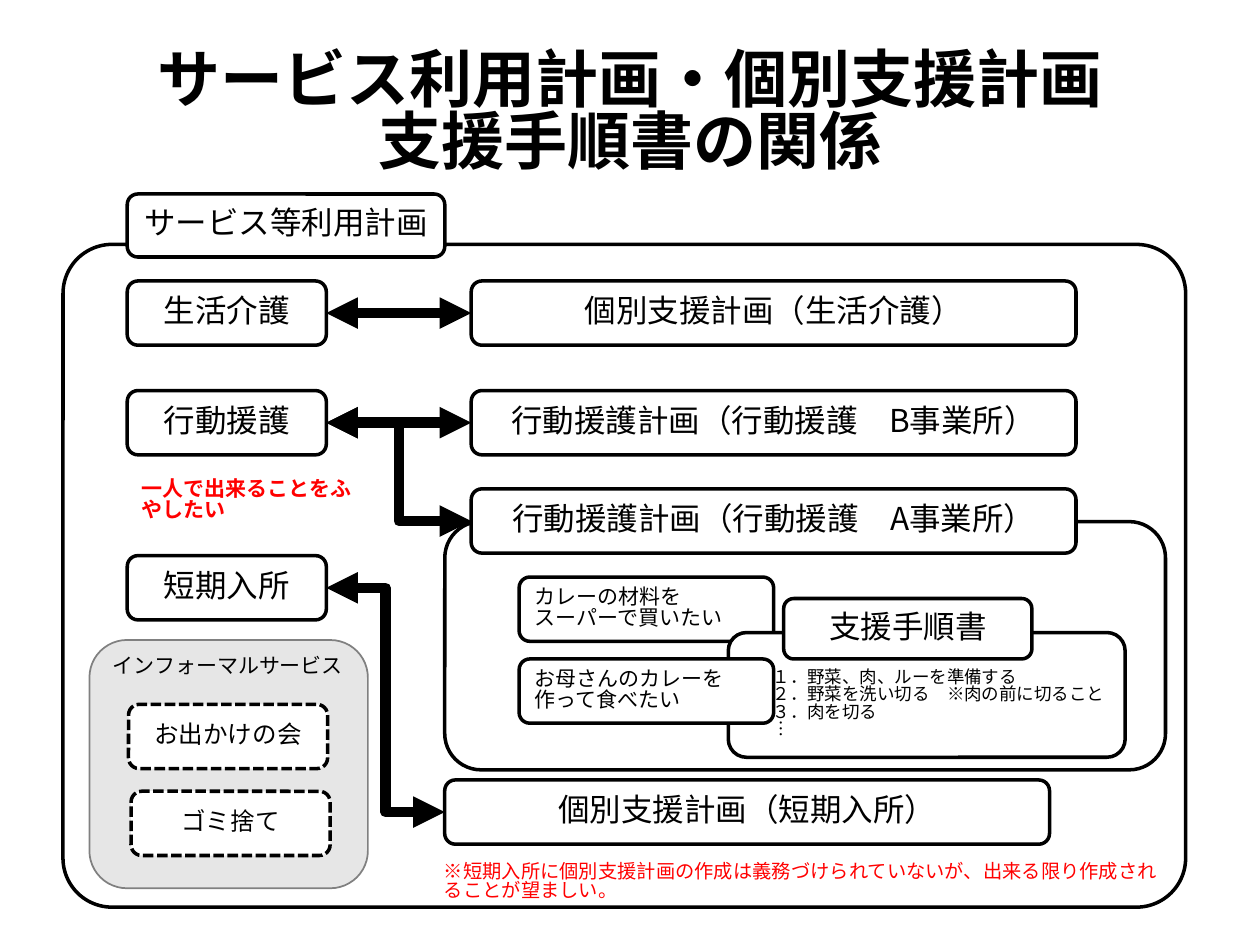
from lxml.etree import SubElement
from pptx import Presentation
from pptx.dml.color import RGBColor
from pptx.enum.dml import MSO_LINE
from pptx.enum.shapes import MSO_CONNECTOR, MSO_SHAPE
from pptx.enum.text import MSO_ANCHOR, PP_ALIGN
from pptx.oxml.ns import qn
from pptx.util import Inches, Pt

BLACK, WHITE, RED = "000000", "FFFFFF", "FF0000"
RIGHT, LEFT = 3, 1  # connection sites
ROW = 0.51          # height of a standard box
PLAN_X, PLAN_W = 3.74, 4.8
SERVICE_X, SERVICE_W = 1.01, 1.58


def color(code):
    return RGBColor.from_string(code)


def apply(target, values):
    for name, value in values.items():
        setattr(target, name, value)


class Board:
    """Holds the style and the slide being drawn."""
    font = "Noto Sans CJK JP"
    spacing = 0.82

    def __init__(self, slide):
        self.slide = slide
        self.home = slide.shapes

    def label(self, frame, text, size, ink=BLACK, bold=False,
              align=PP_ALIGN.CENTER, anchor=MSO_ANCHOR.MIDDLE, pads=None):
        """Fill a text frame; a newline starts a paragraph."""
        frame.text = text
        apply(frame, {"word_wrap": True, "vertical_anchor": anchor})
        apply(frame, {f"margin_{side}": Inches(pad)
                      for side, pad in (pads or {}).items()})
        for par in frame.paragraphs:
            apply(par, {"alignment": align, "line_spacing": self.spacing})
            for run in par.runs:
                apply(run.font, {"size": Pt(size), "bold": bold,
                                 "name": self.font})
                run.font.color.rgb = color(ink)
                SubElement(run.font._element, qn("a:ea"), typeface=self.font)

    def title(self, text, x, y, w, h):
        head = self.slide.shapes.title
        apply(head, {"left": Inches(x), "top": Inches(y),
                     "width": Inches(w), "height": Inches(h)})
        self.label(head.text_frame, text, 36, bold=True)

    def box(self, x, y, w, h=ROW, text="", size=18, fill=WHITE, line=BLACK,
            width=2, dash=None, alpha=None, adj=None, **style):
        """Add a rounded box; fill or line may be None."""
        box = self.home.add_shape(MSO_SHAPE.ROUNDED_RECTANGLE, Inches(x),
                                  Inches(y), Inches(w), Inches(h))
        box.shadow.inherit = False
        if adj:
            box.adjustments[0] = adj
        if fill:
            box.fill.solid()
            box.fill.fore_color.rgb = color(fill)
        else:
            box.fill.background()
        if alpha:
            tone = box.fill._xPr.find(f"{qn('a:solidFill')}/{qn('a:srgbClr')}")
            SubElement(tone, qn("a:alpha"), val=str(alpha * 1000))
        if line:
            box.line.color.rgb = color(line)
            apply(box.line, {"width": Pt(width), "dash_style": dash})
        else:
            box.line.fill.background()
        if text:
            self.label(box.text_frame, text, size, **style)
        return box

    def note(self, x, y, w, text, size, bold=False):
        self.box(x, y, w, ROW, text, size, fill=None, line=None, ink=RED,
                 bold=bold, align=PP_ALIGN.LEFT)

    def arrow(self, start, end, kind=MSO_CONNECTOR.STRAIGHT):
        """Join the right side of one box to the left side of another."""
        link = self.home.add_connector(kind, 0, 0, 0, 0)
        link.begin_connect(start, RIGHT)
        link.end_connect(end, LEFT)
        link.line.color.rgb = color(BLACK)
        link.line.width = Pt(6)
        for tag in ("a:headEnd", "a:tailEnd"):
            SubElement(link.line._get_or_add_ln(), qn(tag), type="triangle")
        SubElement(link._element.spPr, qn("a:effectLst"))

    def group(self):
        """Send the boxes that follow into a new group."""
        self.home = self.slide.shapes.add_group_shape().shapes


def main():
    deck = Presentation()
    deck.slide_width, deck.slide_height = Inches(10), Inches(7.5)
    board = Board(deck.slides.add_slide(deck.slide_layouts[5]))

    board.box(0.5, 1.94, 8.91, 5.26, adj=0.074)
    board.title("サービス利用計画・個別支援計画\v支援手順書の関係",
                0.5, 0.29, 9, 1.25)
    board.box(SERVICE_X, 1.54, 2.52, 0.5, "サービス等利用計画")
    board.box(3.53, 4.14, 5.72, 1.97, adj=0.146)

    plan_a, plan_life, plan_b, plan_stay = [
        board.box(x, y, PLAN_W, text=text) for x, y, text in (
            (PLAN_X, 3.88, "行動援護計画（行動援護　A事業所）"),
            (PLAN_X, 2.23, "個別支援計画（生活介護）"),
            (PLAN_X, 3.1, "行動援護計画（行動援護　B事業所）"),
            (3.53, 6.19, "個別支援計画（短期入所）"))]
    life, action, stay = [
        board.box(SERVICE_X, y, SERVICE_W, text=text) for y, text in (
            (2.23, "生活介護"), (3.1, "行動援護"), (4.41, "短期入所"))]

    board.arrow(life, plan_life)
    board.arrow(action, plan_b)
    board.arrow(action, plan_a, MSO_CONNECTOR.ELBOW)
    board.arrow(stay, plan_stay, MSO_CONNECTOR.ELBOW)

    board.box(4.12, 4.58, 2.02, text="カレーの材料を\nスーパーで買いたい",
              size=12, fill=None, align=PP_ALIGN.LEFT)
    board.note(1, 3.72, 2.02, "一人で出来ることをふやしたい", 12, bold=True)
    steps = ("１．野菜、肉、ルーを準備する",
             "２．野菜を洗い切る　※肉の前に切ること",
             "３．肉を切る", "︙")
    board.box(5.78, 5.02, 3.15, 0.99, "\n".join(steps), 10, adj=0.146,
              align=PP_ALIGN.LEFT,
              pads={"left": 0.31, "top": 0.2, "right": 0.05})
    board.box(6.22, 4.75, 1.97, 0.48, "支援手順書")
    board.box(4.12, 5.23, 2.02, text="お母さんのカレーを作って食べたい",
              size=12, align=PP_ALIGN.LEFT)
    board.note(3.4, 6.75, 5.98, "※短期入所に個別支援計画の作成は義務づけられて"
               "いないが、出来る限り作成されることが望ましい。", 11)

    board.group()
    board.box(0.71, 5.08, 2.21, 1.97, "インフォーマルサービス", 12,
              fill="D9D9D9", alpha=64, line="808080", width=1, adj=0.151,
              align=PP_ALIGN.LEFT, anchor=MSO_ANCHOR.TOP, pads={"right": 0.05})
    for x, y, text in ((1.02, 5.59, "お出かけの会"), (1.04, 6.28, "ゴミ捨て")):
        board.box(x, y, SERVICE_W, text=text, size=14,
                  dash=MSO_LINE.SQUARE_DOT)

    deck.save("out.pptx")


if __name__ == "__main__":
    main()
